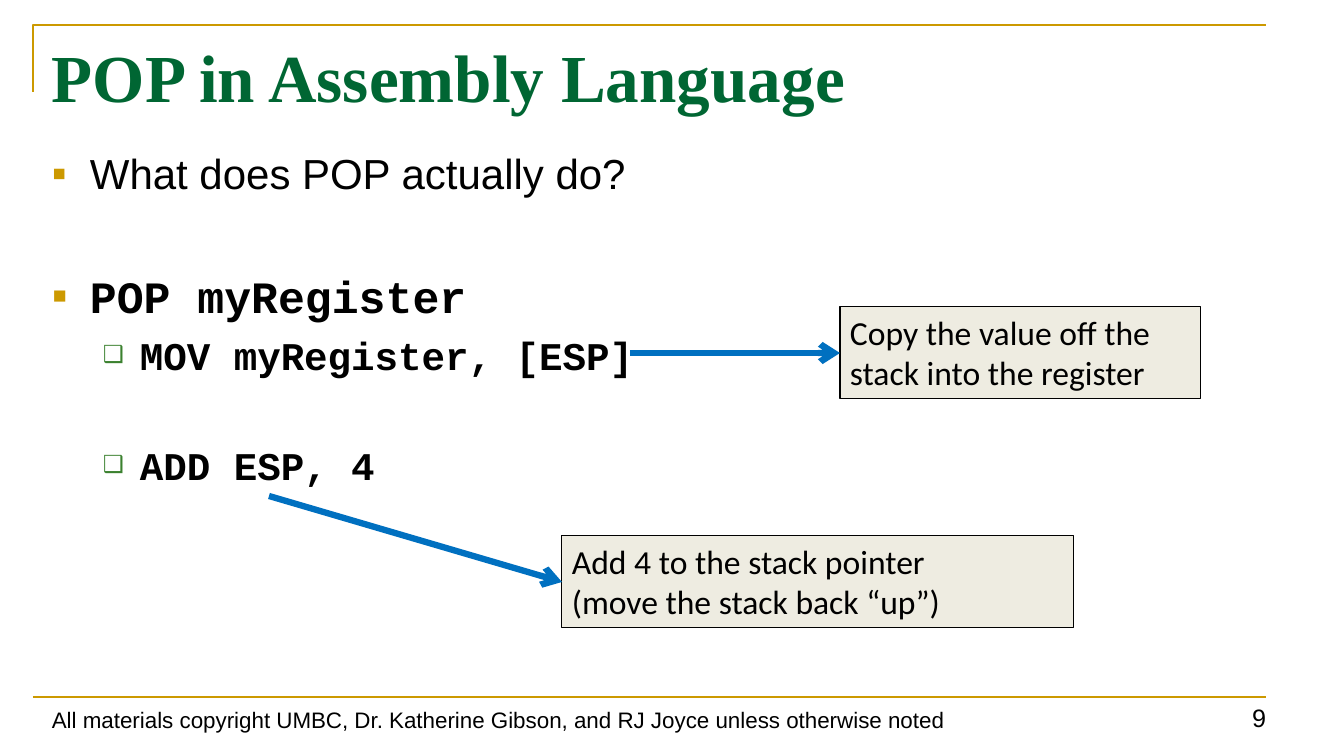
"""Builds the slide that explains what POP does in assembly language."""
import pptx
import pptx.dml.color
import pptx.enum.shapes
import pptx.enum.text
import pptx.oxml.ns
import pptx.util
from lxml import etree

RGB = pptx.dml.color.RGBColor
GOLD = RGB(0xCC, 0x99, 0x00)
GREEN = RGB(0x00, 0x66, 0x33)
LEAF = RGB(0x3B, 0x81, 0x2F)
BLUE = RGB(0x00, 0x70, 0xC0)
CREAM = RGB(0xEE, 0xEC, 0xE1)
BLACK = RGB(0x00, 0x00, 0x00)
EMU_PER_PX = 914400 / 100.8

TITLE = "POP in Assembly Language"
CREDIT = "All materials copyright UMBC, Dr. Katherine Gibson, and RJ Joyce unless otherwise noted"
PAGE = "9"
LEVELS = [
    {"indent": 38, "hang": 38, "mark": "▪", "mark_color": GOLD, "mark_size": 100},
    {"indent": 88, "hang": 37, "mark": "❑", "mark_color": LEAF, "mark_size": 60},
]
CODE = {"font": "Courier New", "bold": True}
BULLETS = [
    ("What does POP actually do?", 0, {"size": 30, "before": 7.5}),
    ("POP myRegister", 0, {"size": 32, "before": 50, **CODE}),
    ("MOV myRegister, [ESP]", 1, {"size": 28, "before": 6.5, **CODE}),
    ("ADD ESP, 4", 1, {"size": 28, "before": 45, **CODE}),
]
NOTES = [
    ("Add 4 to the stack pointer\n(move the stack back “up”)", (562, 536, 512, 92), (269, 496)),
    ("Copy the value off the stack into the register", (840, 307, 361, 92), (630, 353)),
]
FRAME = [(33, 92), (33, 25), (1266, 25)]
FOOT_RULE = [(33, 697), (1266, 697)]


def px(*lengths):
    return [pptx.util.Emu(round(length * EMU_PER_PX)) for length in lengths]


def write(paragraph, text, font="Arial", size=24, color=BLACK, bold=False,
          align=pptx.enum.text.PP_ALIGN.LEFT, before=0):
    paragraph.text = text
    paragraph.alignment = align
    paragraph.space_before = pptx.util.Pt(before)
    for run in paragraph.runs:
        run.font.name = font
        run.font.size = pptx.util.Pt(size)
        run.font.bold = bold
        run.font.color.rgb = color


def add_frame(slide, box, anchor=pptx.enum.text.MSO_ANCHOR.TOP):
    frame = slide.shapes.add_textbox(*px(*box)).text_frame
    frame.word_wrap = True
    frame.vertical_anchor = anchor
    return frame


def child(parent, tag, **attributes):
    return etree.SubElement(parent, pptx.oxml.ns.qn(tag), attributes)


def add_bullet(paragraph, indent, hang, mark, mark_color, mark_size):
    properties = paragraph._p.get_or_add_pPr()
    margin, offset = px(indent, -hang)
    properties.set("marL", str(margin))
    properties.set("indent", str(offset))
    child(child(properties, "a:buClr"), "a:srgbClr", val=str(mark_color))
    child(properties, "a:buSzPct", val=str(mark_size * 1000))
    child(properties, "a:buFont", typeface="Arial")
    child(properties, "a:buChar", char=mark)


def add_line(slide, start, end, color, width, arrow=False):
    line = slide.shapes.add_connector(
        pptx.enum.shapes.MSO_CONNECTOR.STRAIGHT, *px(*start, *end))
    line.line.color.rgb = color
    line.line.width = pptx.util.Pt(width)
    if arrow:
        child(line.line._get_or_add_ln(), "a:tailEnd", type="arrow")
    child(line._element.spPr, "a:effectLst")


def add_note(slide, text, box, arrow_start):
    note = slide.shapes.add_shape(pptx.enum.shapes.MSO_SHAPE.RECTANGLE, *px(*box))
    note.shadow.inherit = False
    note.fill.solid()
    note.fill.fore_color.rgb = CREAM
    note.line.color.rgb = BLACK
    note.line.width = pptx.util.Pt(0.75)
    note.text_frame.word_wrap = True
    note.text_frame.vertical_anchor = pptx.enum.text.MSO_ANCHOR.TOP
    write(note.text_frame.paragraphs[0], text, font="Calibri")
    left, top, _, height = box
    add_line(slide, arrow_start, (left, top + height // 2), BLUE, 4.5, arrow=True)


def add_corner(slide):
    outline = slide.shapes.build_freeform(*FRAME[0], scale=EMU_PER_PX)
    outline.add_line_segments(FRAME[1:], close=False)
    corner = outline.convert_to_shape()
    corner.shadow.inherit = False
    corner.fill.background()
    corner.line.color.rgb = GOLD
    corner.line.width = pptx.util.Pt(1.5)


def main():
    deck = pptx.Presentation()
    deck.slide_width, deck.slide_height = px(1344, 756)
    slide = deck.slides.add_slide(deck.slide_layouts[6])

    add_corner(slide)
    add_line(slide, *FOOT_RULE, GOLD, 1.5)
    bottom = pptx.enum.text.MSO_ANCHOR.BOTTOM
    write(add_frame(slide, (42, 688, 1041, 50), bottom).paragraphs[0], CREDIT, size=16)
    write(add_frame(slide, (1131, 688, 145, 50), bottom).paragraphs[0], PAGE, size=18,
          align=pptx.enum.text.PP_ALIGN.RIGHT)
    write(add_frame(slide, (42, 30, 1234, 112)).paragraphs[0], TITLE,
          font="Times New Roman", size=48, color=GREEN, bold=True)

    body = add_frame(slide, (42, 143, 1234, 532))
    for number, (text, level, style) in enumerate(BULLETS):
        paragraph = body.add_paragraph() if number else body.paragraphs[0]
        paragraph.level = level
        write(paragraph, text, **style)
        add_bullet(paragraph, **LEVELS[level])

    for note in NOTES:
        add_note(slide, *note)
    deck.save("out.pptx")


if __name__ == "__main__":
    main()
